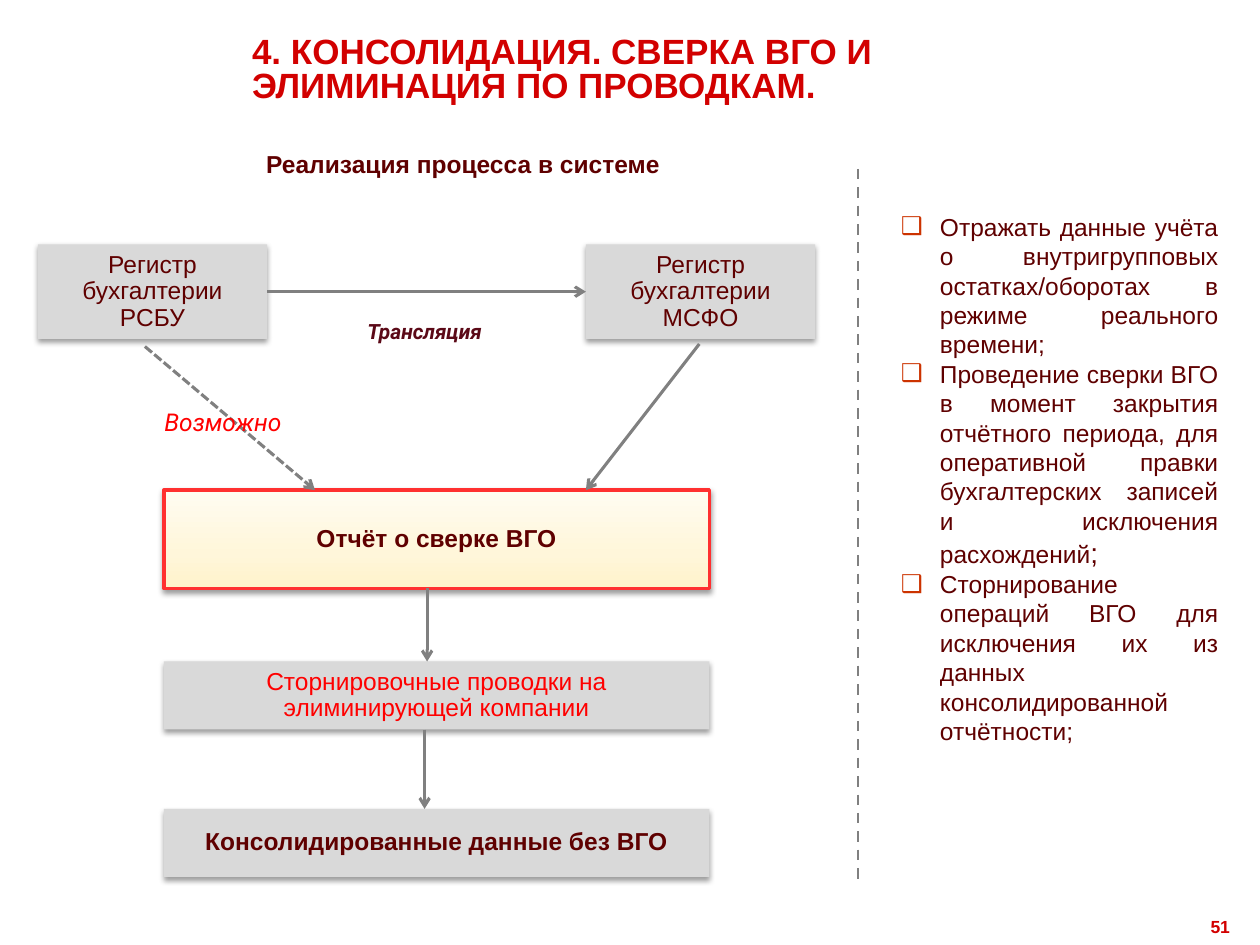
from copy import deepcopy
from dataclasses import dataclass
from typing import Optional

from lxml import etree
from pptx import Presentation
from pptx.dml.color import RGBColor
from pptx.enum.dml import MSO_LINE
from pptx.enum.shapes import MSO_CONNECTOR, MSO_SHAPE
from pptx.enum.text import MSO_ANCHOR, MSO_AUTO_SIZE, PP_ALIGN
from pptx.oxml.ns import qn
from pptx.util import Inches, Pt

LEFT, CENTER, RIGHT = PP_ALIGN.LEFT, PP_ALIGN.CENTER, PP_ALIGN.RIGHT
JUSTIFY = PP_ALIGN.JUSTIFY
TOP, MIDDLE = MSO_ANCHOR.TOP, MSO_ANCHOR.MIDDLE
RECTANGLE, STRAIGHT = MSO_SHAPE.RECTANGLE, MSO_CONNECTOR.STRAIGHT
DASH, SHORT_DASH = MSO_LINE.DASH, MSO_LINE.SQUARE_DOT
NO_AUTOFIT = MSO_AUTO_SIZE.NONE
RED, CRIMSON, MAROON, GRAY = "FF0000", "D20000", "5F0000", "808080"
STAGE_LEFT, STAGE_WIDTH = 1.3, 4.33
REPORT_TOP, REPORT_BOTTOM = 3.89, 4.67


@dataclass
class Step:
    text: str
    left: float
    top: float
    width: float
    height: float
    color: str = MAROON
    bold: bool = False
    highlighted: bool = False


@dataclass
class Link:
    start: tuple[float, float]
    end: tuple[float, float]
    width: float = 1.75
    dash: Optional[MSO_LINE] = None
    arrow: bool = True


@dataclass
class Label:
    text: str
    left: float
    top: float
    width: float
    height: float
    size: float
    color: str
    font: str = "Arial"
    bold: bool = False
    italic: bool = False
    align: PP_ALIGN = CENTER


def rgb(value: str) -> RGBColor:
    return RGBColor.from_string(value)


def place(box, left: float, top: float, width: float, height: float) -> None:
    box.left, box.top = Inches(left), Inches(top)
    box.width, box.height = Inches(width), Inches(height)


def format_text(frame, size, color, font="Arial", bold=False, italic=False,
                align=CENTER, anchor=TOP, spacing=1.0) -> None:
    frame.word_wrap = True
    frame.auto_size = NO_AUTOFIT
    frame.vertical_anchor = anchor
    for para in frame.paragraphs:
        para.alignment = align
        para.line_spacing = spacing
        para.space_before = Pt(0)
        for span in para.runs:
            span.font.name, span.font.size = font, Pt(size)
            span.font.bold, span.font.italic = bold, italic
            span.font.color.rgb = rgb(color)


def add_shadow(box) -> None:
    box.shadow.inherit = False
    effects = box._element.spPr.find(qn("a:effectLst"))
    shadow = etree.SubElement(effects, qn("a:outerShdw"), blurRad=str(Pt(3.1)),
                              dist=str(Pt(1.6)), dir="5400000", rotWithShape="0")
    color = etree.SubElement(shadow, qn("a:srgbClr"), val="000000")
    etree.SubElement(color, qn("a:alpha"), val="38000")


def fill_gradient(box, stops) -> None:
    box.fill.gradient()
    box.fill.gradient_angle = 90
    stop_list = box._element.spPr.find(".//" + qn("a:gsLst"))
    while len(stop_list) < len(stops):
        stop_list.append(deepcopy(stop_list[0]))
    for stop, (position, color) in zip(box.fill.gradient_stops, stops):
        stop.position = position
        stop.color.rgb = rgb(color)


def add_step(page, step: Step):
    box = page.shapes.add_shape(RECTANGLE, Inches(step.left), Inches(step.top),
                                Inches(step.width), Inches(step.height))
    if step.highlighted:
        fill_gradient(box, [(0, "FFF3CA"), (0.35, "FFF6DA"), (1, "FFFCF1")])
        box.line.color.rgb = rgb("FF3030")
        box.line.width = Pt(2)
    else:
        box.fill.solid()
        box.fill.fore_color.rgb = rgb("D9D9D9")
        box.line.fill.background()
    add_shadow(box)
    box.text_frame.text = step.text
    format_text(box.text_frame, 14, step.color, bold=step.bold, anchor=MIDDLE, spacing=0.9)
    return box


def add_link(page, link: Link):
    points = [Inches(value) for value in link.start + link.end]
    line = page.shapes.add_connector(STRAIGHT, *points)
    line.line.color.rgb = rgb(GRAY)
    line.line.width = Pt(link.width)
    if link.dash is not None:
        line.line.dash_style = link.dash
    if link.arrow:
        etree.SubElement(line.line._get_or_add_ln(), qn("a:tailEnd"), type="arrow")
    etree.SubElement(line._element.spPr, qn("a:effectLst"))
    return line


def add_label(page, label: Label) -> None:
    box = page.shapes.add_textbox(Inches(label.left), Inches(label.top),
                                  Inches(label.width), Inches(label.height))
    box.text_frame.text = label.text
    format_text(box.text_frame, label.size, label.color, label.font,
                label.bold, label.italic, label.align)


def add_bullet(para) -> None:
    properties = para._p.get_or_add_pPr()
    properties.set("marL", str(Inches(0.31)))
    properties.set("indent", str(Inches(-0.31)))
    color = etree.SubElement(properties, qn("a:buClr"))
    etree.SubElement(color, qn("a:srgbClr"), val="CC3300")
    etree.SubElement(properties, qn("a:buFont"), typeface="Arial")
    etree.SubElement(properties, qn("a:buChar"), char="❑")


REGISTERS = [
    Step("Регистр бухгалтерии РСБУ", 0.3, 1.94, 1.82, 0.75),
    Step("Регистр бухгалтерии МСФО", 4.65, 1.94, 1.82, 0.75),
]
STAGES = [
    Step("Отчёт о сверке ВГО", STAGE_LEFT, REPORT_TOP, STAGE_WIDTH, 0.78,
         bold=True, highlighted=True),
    Step("Сторнировочные проводки на элиминирующей компании",
         STAGE_LEFT, 5.25, STAGE_WIDTH, 0.54, color=RED),
    Step("Консолидированные данные без ВГО",
         STAGE_LEFT, 6.42, STAGE_WIDTH, 0.54, bold=True),
]
LINKS = [
    Link((6.81, 1.34), (6.81, 7.01), width=1.5, dash=DASH, arrow=False),
    Link((5.55, 2.73), (4.65, REPORT_TOP)),
    Link((1.15, 2.75), (2.5, REPORT_TOP), dash=SHORT_DASH),
    Link((3.39, REPORT_BOTTOM), (3.39, 5.25)),
    Link((3.37, 5.79), (3.37, 6.42)),
]
LABELS = [
    Label("Реализация процесса в системе", 1.9, 1.13, 3.55, 0.34, 14, MAROON, bold=True),
    Label("Трансляция", 2.48, 2.48, 1.78, 0.42, 12, "5B0917", "Roboto", True, True),
    Label("Возможно", 0.47, 3.18, 2.6, 0.3, 14, RED, "Roboto", italic=True),
    Label("51", 9.02, 7.22, 0.84, 0.28, 10, CRIMSON, bold=True, align=RIGHT),
]
GOALS = [
    "Отражать данные учёта о внутригрупповых остатках/оборотах в режиме реального времени;",
    "Проведение сверки ВГО в момент закрытия отчётного периода, для оперативной правки "
    "бухгалтерских записей и исключения расхождений",
    "Сторнирование операций ВГО для исключения их из данных консолидированной отчётности;",
]


def main() -> None:
    deck = Presentation()
    deck.slide_width, deck.slide_height = Inches(10), Inches(7.5)
    page = deck.slides.add_slide(deck.slide_layouts[1])

    title, goals = page.shapes.title, page.placeholders[1]
    place(title, 1.9, 0.13, 7.11, 0.87)
    title.text_frame.text = "4. КОНСОЛИДАЦИЯ. СВЕРКА ВГО И\vЭЛИМИНАЦИЯ ПО ПРОВОДКАМ."
    format_text(title.text_frame, 20, CRIMSON, bold=True, align=LEFT,
                anchor=MIDDLE, spacing=0.8)

    place(goals, 7.05, 1.63, 2.72, 5.52)
    goals.text_frame.text = "\n".join(GOALS)
    paragraphs = goals.text_frame.paragraphs
    for para in paragraphs:
        add_bullet(para)
    semicolon = paragraphs[1].add_run()
    semicolon.text = ";"
    format_text(goals.text_frame, 14, MAROON, align=JUSTIFY)
    semicolon.font.size = Pt(16)

    for stage in STAGES:
        add_step(page, stage)
    source, target = [add_step(page, register) for register in REGISTERS]
    translation = add_link(page, Link((2.12, 2.31), (4.65, 2.31)))
    translation.begin_connect(source, 3)
    translation.end_connect(target, 1)
    for link in LINKS:
        add_link(page, link)
    for label in LABELS:
        add_label(page, label)
    deck.save("out.pptx")


if __name__ == "__main__":
    main()
